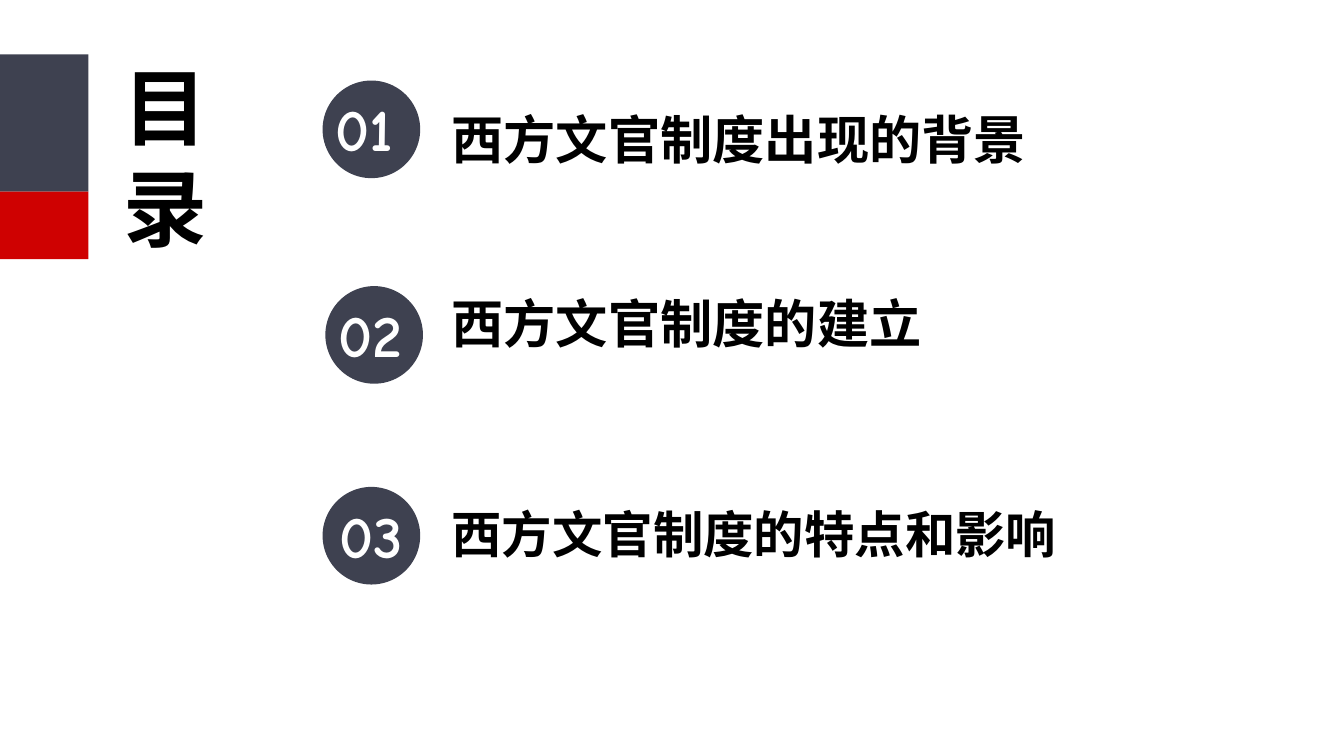
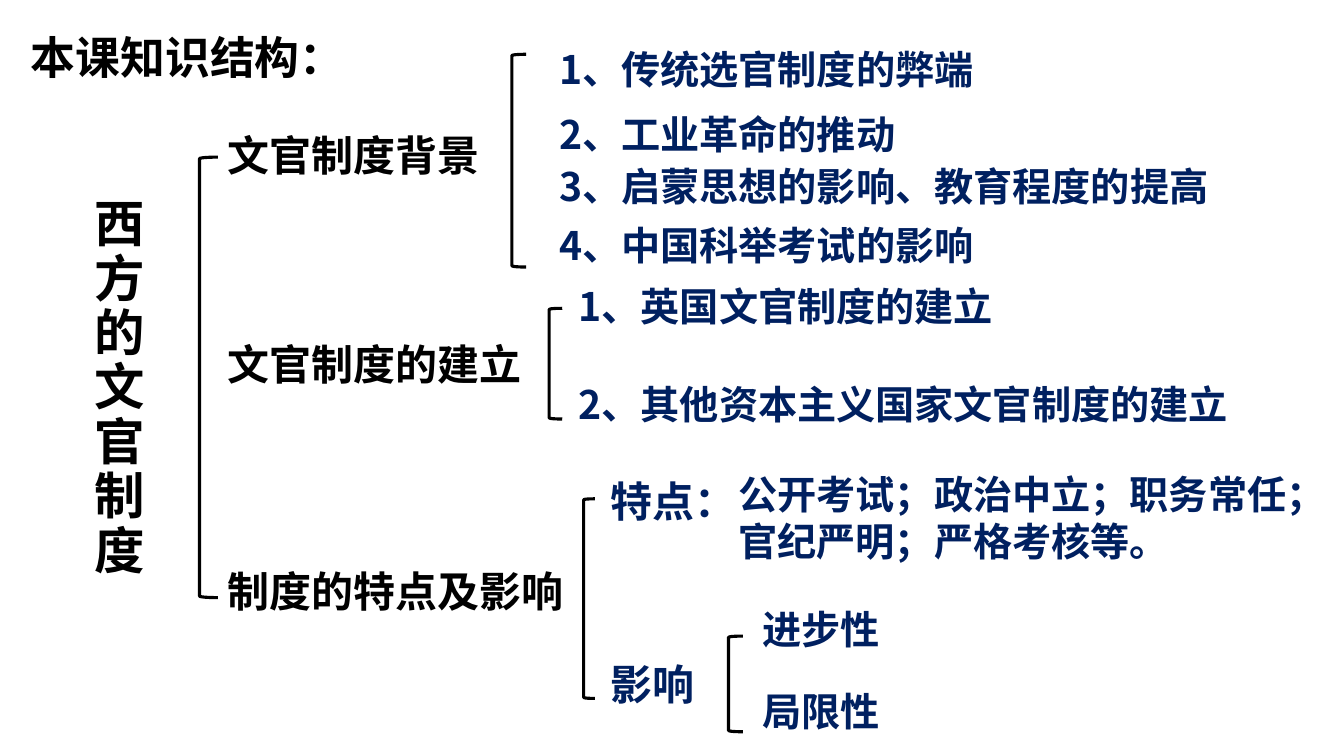
from dataclasses import dataclass, replace

from lxml import etree
from pptx import Presentation
from pptx.dml.color import RGBColor
from pptx.enum.shapes import MSO_SHAPE
from pptx.enum.text import MSO_ANCHOR, MSO_AUTO_SIZE, PP_ALIGN
from pptx.oxml.ns import qn
from pptx.util import Cm, Pt

RECT, OVAL, BRACKET = MSO_SHAPE.RECTANGLE, MSO_SHAPE.OVAL, MSO_SHAPE.LEFT_BRACKET
TOP, MIDDLE = MSO_ANCHOR.TOP, MSO_ANCHOR.MIDDLE
LEFT, RIGHT = PP_ALIGN.LEFT, PP_ALIGN.RIGHT
FIT, NO_FIT = MSO_AUTO_SIZE.SHAPE_TO_FIT_TEXT, MSO_AUTO_SIZE.NONE


class Theme:
    slate = RGBColor(0x3E, 0x41, 0x50)
    red = RGBColor(0xCF, 0x01, 0x01)
    black = RGBColor(0, 0, 0)
    white = RGBColor(0xFF, 0xFF, 0xFF)
    navy = RGBColor(0, 0x20, 0x60)
    body_font, title_font, number_font = "Noto Sans CJK SC", "Arial", "Comic Neue"
    title, number, agenda, agenda_small = 60, 42.6, 37.3, 36
    root, heading, branch, leaf = 36, 32, 30, 28
    bracket_line = 2.25


@dataclass(frozen=True)
class TextStyle:
    size: float
    color: RGBColor = Theme.black
    font: str = Theme.body_font
    spacing: float = 0.9
    anchor: int = MIDDLE
    align: int = LEFT
    fit: int = NO_FIT


TITLE = TextStyle(Theme.title, font=Theme.title_font, spacing=1, align=RIGHT, fit=FIT)
NUMBER = TextStyle(Theme.number, Theme.white, Theme.number_font, 1, TOP)
AGENDA = TextStyle(Theme.agenda)
AGENDA_SMALL = TextStyle(Theme.agenda_small, spacing=1)
HEADING = TextStyle(Theme.heading)
ROOT = TextStyle(Theme.root)
BRANCH = TextStyle(Theme.branch)
BRANCH_LOOSE = replace(BRANCH, spacing=1)
TOPIC = replace(BRANCH, color=Theme.navy)
LEAF = TextStyle(Theme.leaf, Theme.navy)
LEAF_TOP = replace(LEAF, spacing=1, anchor=TOP, fit=FIT)


def cm(box):
    return [Cm(v) for v in box]


def add_text(slide, box, text, style):
    """Put text in a box, one paragraph for each line."""
    tf = slide.shapes.add_textbox(*cm(box)).text_frame
    tf.word_wrap = True
    tf.auto_size = style.fit
    tf.vertical_anchor = style.anchor
    tf.text = text
    for p in tf.paragraphs:
        p.alignment = style.align
        p.line_spacing = style.spacing
        font = p.font
        font.size = Pt(style.size)
        font.bold = True
        font.color.rgb = style.color
        font.name = style.font
        latin = p._p.pPr.find(qn("a:defRPr")).find(qn("a:latin"))
        east_asian = etree.Element(qn("a:ea"), typeface=style.font)
        latin.addnext(east_asian)


def add_solid(slide, kind, box, color):
    sp = slide.shapes.add_shape(kind, *cm(box))
    sp.shadow.inherit = False
    sp.fill.solid()
    sp.fill.fore_color.rgb = color
    sp.line.fill.background()


def add_side_title(slide, box, text):
    """Two-colour tab with a vertical title to its right."""
    x, y, w, h = box
    red_h = 1.7
    add_solid(slide, RECT, (x, y, w, h - red_h), Theme.slate)
    add_solid(slide, RECT, (x, y + h - red_h, w, red_h), Theme.red)
    add_text(slide, (x + w + 0.63, y - 0.12, 1.73, 5.38), text, TITLE)


def add_agenda_entry(slide, box, number, label, number_dx, label_dy, style):
    """Numbered disc with its label; label_dy shifts the label from the disc's middle."""
    x, y, w, h = box
    label_x = 11.13
    add_solid(slide, OVAL, (x, y, h, h), Theme.slate)
    add_text(slide, (x + number_dx, y + 0.17, 2.4, 2.08), number, NUMBER)
    add_text(slide, (label_x, y + label_dy, x + w - label_x, h), label, style)


def add_bracket_group(slide, box, items):
    """Left bracket with items given as offset, size, text and style."""
    x, y = box[:2]
    sp = slide.shapes.add_shape(BRACKET, *cm(box))
    sp.shadow.inherit = False
    sp.fill.background()
    sp.line.color.rgb = Theme.black
    sp.line.width = Pt(Theme.bracket_line)
    for dx, dy, w, h, text, style in items:
        add_text(slide, (x + dx, y + dy, w, h), text, style)


def build_agenda(slide):
    add_side_title(slide, (0, 1.37, 2.23, 5.16), "目录")
    entries = [
        (8.13, 2.03, "01", "西方文官制度出现的背景", 0.07, 0.33, AGENDA),
        (8.2, 7.21, "02", "西方文官制度的建立", 0.08, -0.21, AGENDA),
        (8.13, 12.27, "03", "西方文官制度的特点和影响", 0.18, -0.07, AGENDA_SMALL),
    ]
    for x, y, *content in entries:
        add_agenda_entry(slide, (x, y, 19, 2.46), *content)


def build_structure(slide):
    add_text(slide, (0.53, 0.53, 11.3, 1.96), "本课知识结构：", HEADING)
    add_text(slide, (2.13, 4.5, 1.78, 10.64), "西方的文官制度", ROOT)
    groups = [
        ((5.03, 3.96, 0.46, 11.1), [
            (0.46, -1.22, 7.77, 2.46, "文官制度背景", BRANCH),
            (0.46, 4.17, 8.36, 2.08, "文官制度的建立", BRANCH_LOOSE),
            (0.46, 9.58, 9.5, 2.67, "制度的特点及影响", BRANCH_LOOSE),
        ]),
        ((12.9, 1.37, 0.36, 5.36), [
            (0.94, -0.28, 19.35, 1.42, "1、传统选官制度的弊端", LEAF),
            (0.94, 1.37, 19.35, 1.42, "2、工业革命的推动", LEAF),
            (0.94, 2.69, 19.35, 1.42, "3、启蒙思想的影响、教育程度的提高", LEAF),
            (0.94, 4.09, 19.35, 1.45, "4、中国科举考试的影响", LEAF_TOP),
        ]),
        ((13.84, 7.77, 0.33, 2.79), [
            (0.49, -0.71, 18.59, 1.42, "1、英国文官制度的建立", LEAF),
            (0.49, 1.78, 18.59, 1.42, "2、其他资本主义国家文官制度的建立", LEAF),
        ]),
        ((14.71, 12.57, 0.28, 5.03), [
            (0.43, -0.58, 4.78, 1.42, "特点：", TOPIC),
            (3.65, -0.84, 14.81, 2.64,
             "公开考试；政治中立；职务常任；\n官纪严明；严格考核等。", LEAF_TOP),
            (0.43, 4.3, 3.61, 0.89, "影响", TOPIC),
        ]),
        ((18.36, 16.03, 0.36, 2.41), [
            (0.61, -0.89, 4.8, 1.45, "进步性", LEAF_TOP),
            (0.61, 1.17, 4.8, 1.45, "局限性", LEAF_TOP),
        ]),
    ]
    for box, items in groups:
        add_bracket_group(slide, box, items)


def main():
    prs = Presentation()
    prs.slide_width, prs.slide_height = Cm(33.87), Cm(19.05)
    blank = prs.slide_layouts[6]
    for build in (build_agenda, build_structure):
        build(prs.slides.add_slide(blank))
    prs.save("out.pptx")


if __name__ == "__main__":
    main()
